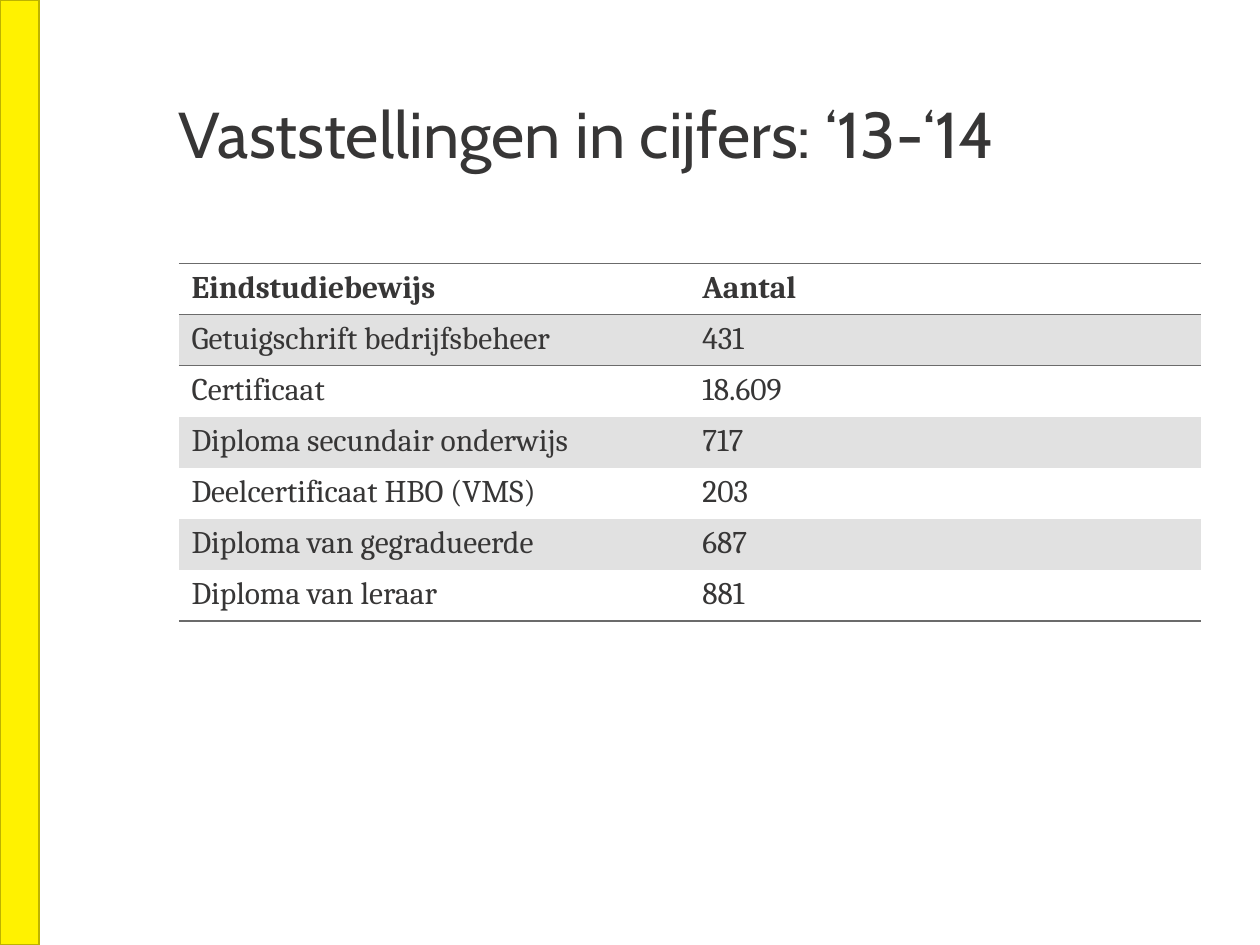
from lxml import etree
from pptx import Presentation
from pptx import util as u
from pptx.dml.color import RGBColor
from pptx.enum import shapes, text
from pptx.oxml.ns import qn

INK, RULE, BAND = "373636", "6B6B6B", "E1E1E1"
NO_STYLE = "{2D5ABB26-0587-4C30-8999-92F81FD0307C}"
ROWS = [
    ("Eindstudiebewijs", "Aantal"),
    ("Getuigschrift bedrijfsbeheer", "431"),
    ("Certificaat", "18.609"),
    ("Diploma secundair onderwijs", "717"),
    ("Deelcertificaat HBO (VMS)", "203"),
    ("Diploma van gegradueerde", "687"),
    ("Diploma van leraar", "881"),
]


def color(code):
    return RGBColor.from_string(code)


def add_run(para, words, face, size, bold=False):
    run = para.add_run()
    run.text = words
    font = run.font
    font.name, font.size, font.bold = face, u.Pt(size), bold
    font.color.rgb = color(INK)


def add_bar(slide, box):
    bar = slide.shapes.add_shape(shapes.MSO_SHAPE.RECTANGLE, *box)
    bar.shadow.inherit = False
    bar.fill.solid()
    bar.fill.fore_color.rgb = color("FFF200")
    bar.line.color.rgb = color("BDB300")
    bar.line.width = u.Pt(1)


def add_title(slide, box, words):
    frame = slide.shapes.add_textbox(*box).text_frame
    frame.word_wrap = True
    frame.vertical_anchor = text.MSO_ANCHOR.TOP
    frame.margin_left = frame.margin_right = 0
    frame.margin_top = frame.margin_bottom = 0
    para = frame.paragraphs[0]
    para.line_spacing = u.Pt(38)
    add_run(para, words, "Cabin", 37)


def rule_cell(cell, sides):
    """Draw borders on the given sides, ahead of the fill as the schema asks."""
    props = cell._tc.get_or_add_tcPr()
    for spot, side in enumerate(sides):
        line = etree.Element(qn("a:ln" + side), w=str(u.Pt(1)))
        fill = etree.SubElement(line, qn("a:solidFill"))
        etree.SubElement(fill, qn("a:srgbClr"), val=RULE)
        props.insert(spot, line)


def add_grid(slide, box, rows):
    """Table with a ruled header, shaded odd rows and a closing rule."""
    grid = slide.shapes.add_table(len(rows), len(rows[0]), *box).table
    grid._tbl.tblPr.find(qn("a:tableStyleId")).text = NO_STYLE
    last = len(rows) - 1
    sides = {0: "TB", 1: "T", last: "B"}
    for r, row in enumerate(rows):
        for c, words in enumerate(row):
            cell = grid.cell(r, c)
            if r % 2:
                cell.fill.solid()
                cell.fill.fore_color.rgb = color(BAND)
            else:
                cell.fill.background()
            rule_cell(cell, sides.get(r, ""))
            add_run(cell.text_frame.paragraphs[0], words, "Cambria", 18, r == 0)


def main():
    deck = Presentation()
    deck.slide_width, deck.slide_height = u.Inches(10), u.Inches(7.5)
    slide = deck.slides.add_slide(deck.slide_layouts[6])
    left, width = u.Inches(1.42), u.Inches(8.11)
    add_bar(slide, (0, 0, u.Inches(0.31), deck.slide_height))
    add_title(slide, (left, u.Inches(0.83), width, u.Inches(1.22)),
              "Vaststellingen in cijfers: ‘13-‘14")
    add_grid(slide, (left, u.Inches(2.09), width, u.Inches(2.84)), ROWS)
    deck.save("out.pptx")


if __name__ == "__main__":
    main()
